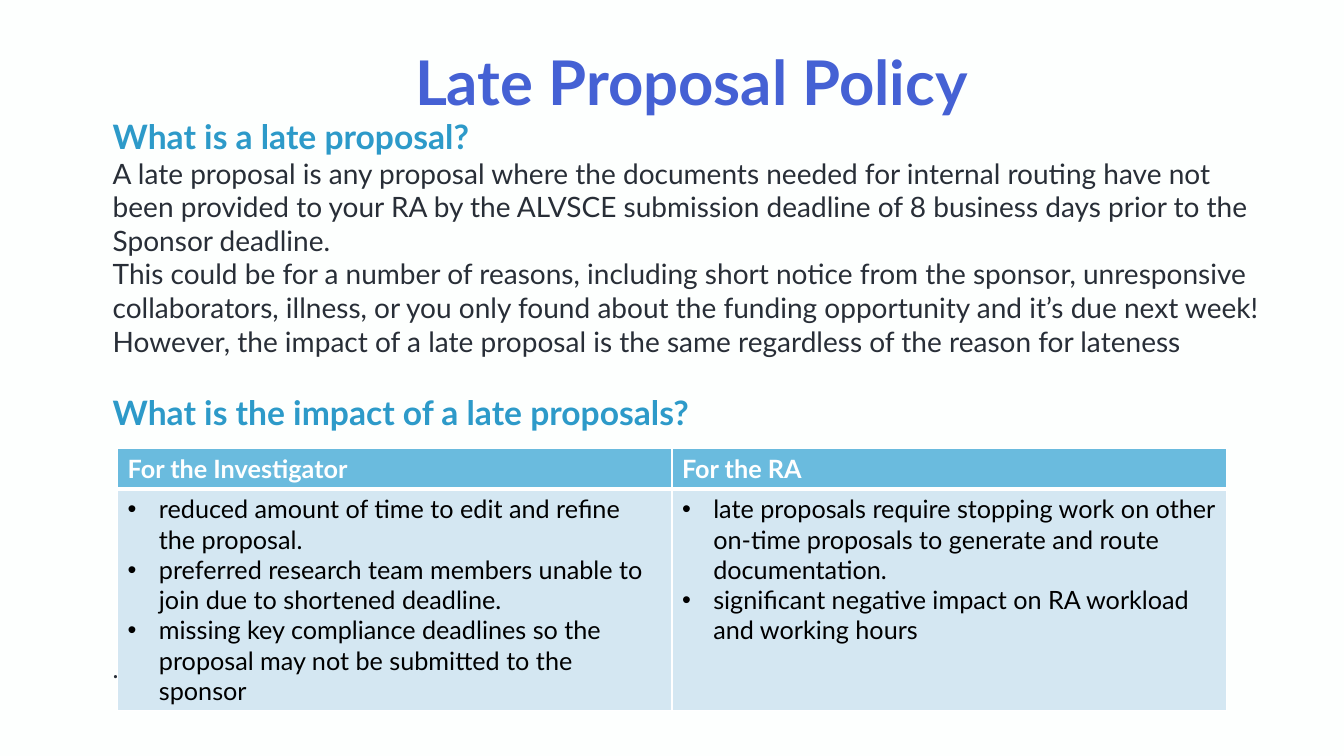
from lxml import etree
from pptx import Presentation
from pptx.dml.color import RGBColor
from pptx.enum.text import PP_ALIGN
from pptx.oxml.ns import qn
from pptx.util import Inches, Pt

LEFT, CENTER = PP_ALIGN.LEFT, PP_ALIGN.CENTER
PAPER = RGBColor(0xFD, 0xFF, 0xFE)
VIOLET = RGBColor(0x45, 0x61, 0xD4)
BLUE = RGBColor(0x2D, 0x9A, 0xC9)
SLATE = RGBColor(0x28, 0x2E, 0x37)
HEADER_FILL = RGBColor(0x6A, 0xBB, 0xDE)
BODY_FILL = RGBColor(0xD4, 0xE7, 0xF2)
WHITE = RGBColor(0xFF, 0xFF, 0xFF)
BLACK = RGBColor(0, 0, 0)
INDENT = Inches(0.31)

presentation = Presentation()
presentation.slide_width = Inches(13.33)
presentation.slide_height = Inches(7.5)
COLUMN = presentation.slide_width / 80
ROW = presentation.slide_height / 45


def write_text(frame, text, size=18, color=SLATE, bold=False, align=LEFT, before=0, bullet=False):
    paragraph = frame.paragraphs[0]
    if paragraph.runs:
        paragraph = frame.add_paragraph()
    paragraph.alignment = align
    paragraph.space_before = Pt(before)
    run = paragraph.add_run()
    run.text = text
    run.font.name = "Lato"
    run.font.size = Pt(size)
    run.font.bold = bold
    run.font.color.rgb = color
    if bullet:
        properties = paragraph._p.get_or_add_pPr()
        properties.set("marL", str(INDENT))
        properties.set("indent", str(-INDENT))
        etree.SubElement(properties, qn("a:buFont")).set("typeface", "Arial")
        etree.SubElement(properties, qn("a:buChar")).set("char", "•")


def set_borders(cell, **widths):
    properties = cell._tc.get_or_add_tcPr()
    for side, width in widths.items():
        line = etree.SubElement(properties, qn("a:ln" + side), w=str(Pt(width)))
        fill = etree.SubElement(line, qn("a:solidFill"))
        etree.SubElement(fill, qn("a:srgbClr")).set("val", str(WHITE))


slide = presentation.slides.add_slide(presentation.slide_layouts[6])
slide.background.fill.solid()
slide.background.fill.fore_color.rgb = PAPER

heading = {"size": 24, "color": BLUE, "bold": True}
text_boxes = [
    ((7, 2.34, 68.34, 5.04), [
        ("Late Proposal Policy", {"size": 44, "color": VIOLET, "bold": True, "align": CENTER}),
    ]),
    ((6.12, 6.6, 70.08, 39.36), [
        ("What is a late proposal?", heading),
        ("A late proposal is any proposal where the documents needed for internal routing have not "
         "been provided to your RA by the ALVSCE submission deadline of 8 business days prior to the "
         "Sponsor deadline.", {"size": 20}),
        ("This could be for a number of reasons, including short notice from the sponsor, unresponsive "
         "collaborators, illness, or you only found about the funding opportunity and it’s due next week!",
         {"size": 20}),
        ("However, the impact of a late proposal is the same regardless of the reason for lateness",
         {"size": 20}),
        ("What is the impact of a late proposals?", {**heading, "before": 24}),
        (".", {"before": 158}),
    ]),
]
for (left, top, width, height), paragraphs in text_boxes:
    text_box = slide.shapes.add_textbox(
        round(left * COLUMN), round(top * ROW), round(width * COLUMN), round(height * ROW))
    text_box.text_frame.word_wrap = True
    for text, text_format in paragraphs:
        write_text(text_box.text_frame, text, **text_format)

impacts = {
    "For the Investigator": [
        "reduced amount of time to edit and refine the proposal.",
        "preferred research team members unable to join due to shortened deadline.",
        "missing key compliance deadlines so the proposal may not be submitted to the sponsor",
    ],
    "For the RA": [
        "late proposals require stopping work on other on-time proposals to generate and route documentation.",
        "significant negative impact on RA workload and working hours",
    ],
}
table = slide.shapes.add_table(
    2, len(impacts), round(7 * COLUMN), round(26.7 * ROW), round(66 * COLUMN), round(15.6 * ROW)).table
table.rows[0].height = round(2.4 * ROW)
table.rows[1].height = round(13.2 * ROW)

for index, (audience, effects) in enumerate(impacts.items()):
    header, body = table.cell(0, index), table.cell(1, index)
    set_borders(header, L=1, R=1, T=1, B=3)
    set_borders(body, L=1, R=1, T=3, B=1)
    for cell, color in ((header, HEADER_FILL), (body, BODY_FILL)):
        cell.fill.solid()
        cell.fill.fore_color.rgb = color
    write_text(header.text_frame, audience, color=WHITE, bold=True)
    for effect in effects:
        write_text(body.text_frame, effect, color=BLACK, bullet=True)

presentation.save("out.pptx")
